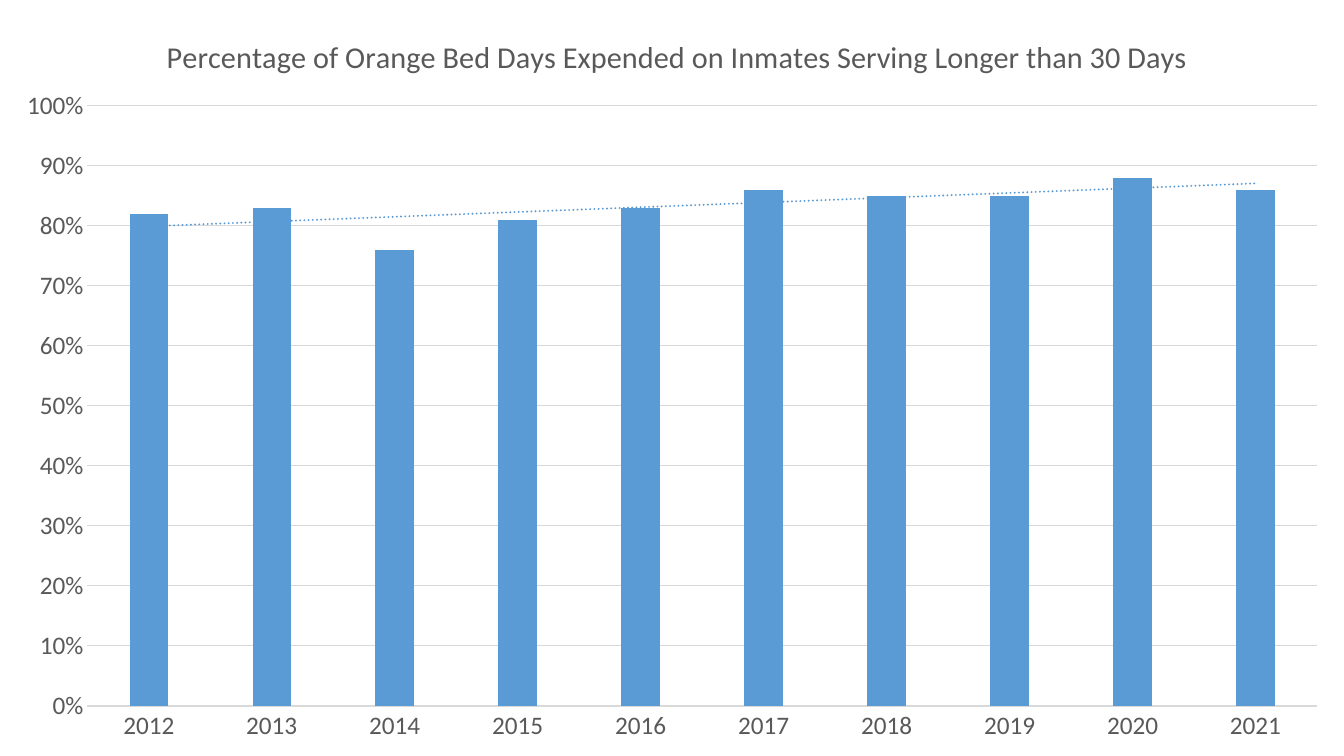
from dataclasses import dataclass

from lxml import etree
from pptx import Presentation
from pptx.chart.data import CategoryChartData
from pptx.dml.color import RGBColor
from pptx.enum import chart as kinds
from pptx.oxml import ns, parse_xml
from pptx.util import Pt


@dataclass(frozen=True)
class Theme:
    font: str = "Calibri"
    text: str = "595959"
    grid: str = "D9D9D9"
    bar: str = "5B9BD5"
    title_size: float = 21.6
    label_size: float = 18
    hairline: float = 0.75
    trend_width: float = 1.5


@dataclass(frozen=True)
class Share:
    year: int
    value: float


THEME = Theme()
PAGE_WIDTH, PAGE_HEIGHT = Pt(960), Pt(540)
TITLE = "Percentage of Orange Bed Days Expended on Inmates Serving Longer than 30 Days"
SHARES = [
    Share(year, value)
    for year, value in enumerate(
        [0.82, 0.83, 0.76, 0.81, 0.83, 0.86, 0.85, 0.85, 0.88, 0.86], start=2012
    )
]


def style_font(font, size: float) -> None:
    font.name = THEME.font
    font.size = Pt(size)
    font.bold = False
    font.color.rgb = RGBColor.from_string(THEME.text)


def style_line(line) -> None:
    line.color.rgb = RGBColor.from_string(THEME.grid)
    line.width = Pt(THEME.hairline)


def set_layout(parent, index: int, target: str = "", **fractions: float) -> None:
    """Fix a chart part at fractions of the chart's width and height."""
    for old in parent.findall(ns.qn("c:layout")):
        parent.remove(old)
    layout = etree.Element(ns.qn("c:layout"))
    manual = etree.SubElement(layout, ns.qn("c:manualLayout"))
    settings = {"layoutTarget": target} if target else {}
    settings |= {"xMode": "edge", "yMode": "edge"}
    settings |= {name: str(value) for name, value in fractions.items()}
    for name, value in settings.items():
        etree.SubElement(manual, ns.qn(f"c:{name}")).set("val", value)
    parent.insert(index, layout)


def add_trend_line(series) -> None:
    trend = parse_xml(
        f'<c:trendline {ns.nsdecls("c", "a")}><c:spPr>'
        f'<a:ln w="{Pt(THEME.trend_width)}" cap="rnd"><a:solidFill>'
        f'<a:srgbClr val="{THEME.bar}"/></a:solidFill><a:prstDash val="sysDot"/></a:ln>'
        '</c:spPr><c:trendlineType val="linear"/>'
        '<c:dispRSqr val="0"/><c:dispEq val="0"/></c:trendline>'
    )
    series._element.find(ns.qn("c:cat")).addprevious(trend)


def style_title(chart) -> None:
    chart.has_title = True
    title = chart.chart_title
    title.include_in_layout = False
    title.text_frame.text = TITLE
    style_font(title.text_frame.paragraphs[0].runs[0].font, THEME.title_size)
    set_layout(title._element, 1, x=0.12, y=0.04)


def style_axes(chart) -> None:
    years, percents = chart.category_axis, chart.value_axis
    for axis in (years, percents):
        axis.major_tick_mark = axis.minor_tick_mark = kinds.XL_TICK_MARK.NONE
        style_font(axis.tick_labels.font, THEME.label_size)
    style_line(years.format.line)
    percents.format.line.fill.background()
    percents.minimum_scale, percents.maximum_scale = 0, 1
    percents.major_unit = 0.1
    percents.tick_labels.number_format = "0%"
    percents.tick_labels.number_format_is_linked = False
    style_line(percents.major_gridlines.format.line)


def style_bars(plot) -> None:
    plot.gap_width, plot.overlap = 219, -27
    plot.vary_by_categories = False
    series = plot.series[0]
    series.invert_if_negative = False
    series.format.fill.solid()
    series.format.fill.fore_color.rgb = RGBColor.from_string(THEME.bar)
    add_trend_line(series)


def add_share_chart(page) -> None:
    data = CategoryChartData(number_format="0%")
    data.categories = [str(share.year) for share in SHARES]
    data.add_series("Series 1", [share.value for share in SHARES])
    chart = page.shapes.add_chart(
        kinds.XL_CHART_TYPE.COLUMN_CLUSTERED, 0, 0, PAGE_WIDTH, PAGE_HEIGHT, data
    ).chart
    chart.has_legend = False
    style_font(chart.font, THEME.label_size)
    style_title(chart)
    style_axes(chart)
    style_bars(chart.plots[0])
    plot_area = chart._chartSpace.chart.plotArea
    set_layout(plot_area, 0, "inner", x=0.065, y=0.14, w=0.915, h=0.794)


def main() -> None:
    deck = Presentation()
    deck.slide_width, deck.slide_height = PAGE_WIDTH, PAGE_HEIGHT
    page = deck.slides.add_slide(deck.slide_layouts.get_by_name("Blank"))
    add_share_chart(page)
    deck.save("out.pptx")


if __name__ == "__main__":
    main()
